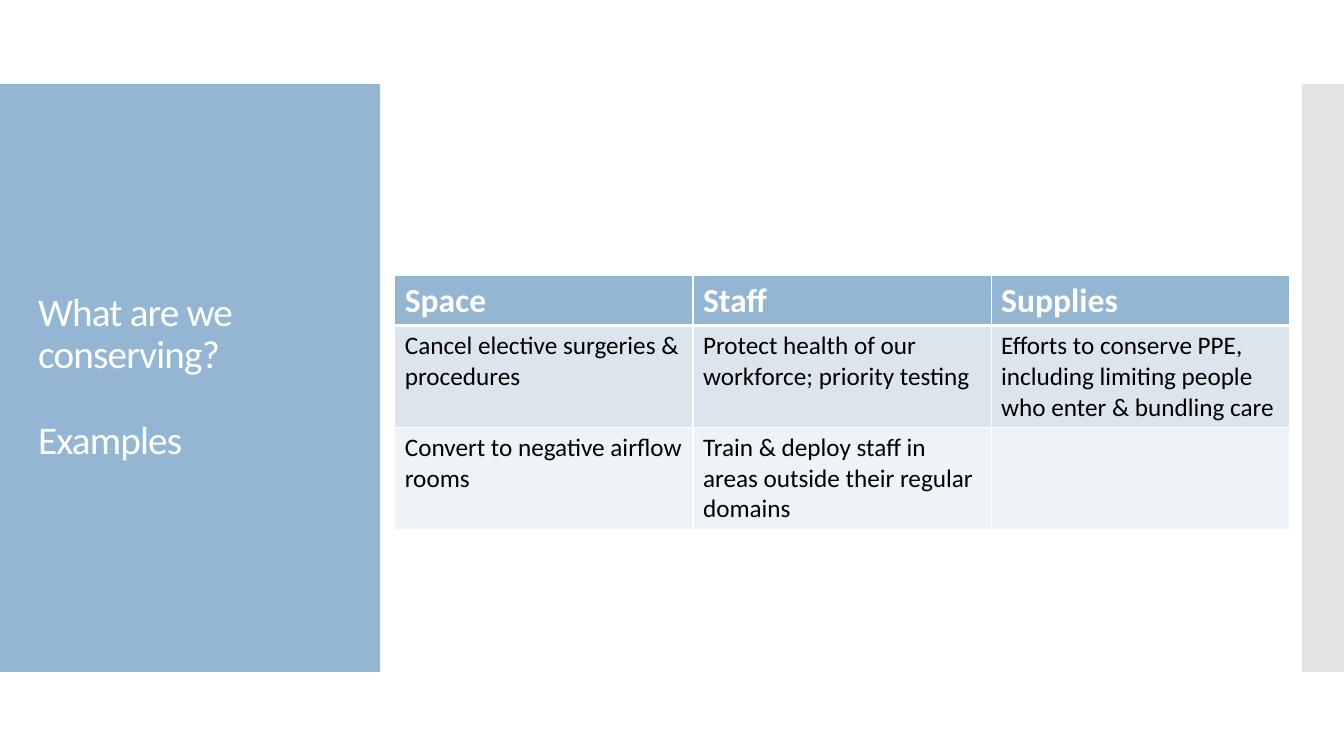
"""Build the slide listing what is conserved: space, staff and supplies."""
from lxml import etree
from pptx import Presentation
from pptx import util as u
from pptx.dml.color import RGBColor
from pptx.enum import shapes, text
from pptx.oxml.ns import qn

TITLE = ["What are we conserving?", "Examples"]
ROWS = [
    ["Space", "Staff", "Supplies"],
    ["Cancel elective surgeries & procedures",
     "Protect health of our workforce; priority testing",
     "Efforts to conserve PPE, including limiting people who enter & bundling care"],
    ["Convert to negative airflow rooms",
     "Train & deploy staff in areas outside their regular domains",
     ""],
]
COLORS = {"blue": "94B6D2", "gray": "C8C8C8", "white": "FFFFFF", "black": "000000",
          "band": "DCE5EE", "light": "EEF3F7"}
ROW_FILLS = ["blue", "band", "light"]
ROW_HEIGHTS = [48, 97, 97]
COLUMN_WIDTH = 284
TABLE_LEFT, TABLE_TOP = 376, 262
SLIDE_WIDTH, SLIDE_HEIGHT = 1280, 720
PANEL_TOP, PANEL_HEIGHT = 80, 560
PANEL_WIDTH, BAR_WIDTH = 362, 40
TITLE_BOX = (27, 118, 309, 483)
FONT = "Calibri"
THIN, THICK = 1, 3


def px(length):
    return u.Emu(length * 9525)


def rgb(name):
    return RGBColor.from_string(COLORS[name])


def add_panel(slide, left, width, color):
    shape = slide.shapes.add_shape(shapes.MSO_SHAPE.RECTANGLE, px(left), px(PANEL_TOP),
                                   px(width), px(PANEL_HEIGHT))
    shape.shadow.inherit = False
    shape.fill.solid()
    shape.fill.fore_color.rgb = rgb(color)
    shape.line.fill.background()
    return shape


def add_run(paragraph, words, size, color, bold=False):
    run = paragraph.add_run()
    run.text = words
    run.font.name = FONT
    run.font.size = u.Pt(size)
    run.font.bold = bold
    run.font.color.rgb = rgb(color)
    return run


def add_title(slide):
    frame = slide.shapes.add_textbox(*map(px, TITLE_BOX)).text_frame
    frame.word_wrap = True
    frame.vertical_anchor = text.MSO_ANCHOR.MIDDLE
    for index, words in enumerate(TITLE):
        paragraph = frame.add_paragraph() if index else frame.paragraphs[0]
        paragraph.line_spacing = 0.9
        paragraph.space_before = u.Pt(31 if index else 0)
        run = add_run(paragraph, words, 28, "white")
        run.font._element.set("spc", "-60")


def set_borders(cell, top, bottom):
    properties = cell._tc.get_or_add_tcPr()
    for side, points in (("L", THIN), ("R", THIN), ("T", top), ("B", bottom)):
        line = etree.SubElement(properties, qn(f"a:ln{side}"), w=str(u.Pt(points)))
        fill = etree.SubElement(line, qn("a:solidFill"))
        etree.SubElement(fill, qn("a:srgbClr"), val=COLORS["white"])


def add_examples(slide):
    columns = len(ROWS[0])
    table = slide.shapes.add_table(len(ROWS), columns, px(TABLE_LEFT), px(TABLE_TOP),
                                   px(columns * COLUMN_WIDTH), px(sum(ROW_HEIGHTS))).table
    for column in table.columns:
        column.width = px(COLUMN_WIDTH)
    for index, words_in_row in enumerate(ROWS):
        header = index == 0
        table.rows[index].height = px(ROW_HEIGHTS[index])
        for column, words in enumerate(words_in_row):
            cell = table.cell(index, column)
            set_borders(cell, THICK if index == 1 else THIN, THICK if header else THIN)
            cell.fill.solid()
            cell.fill.fore_color.rgb = rgb(ROW_FILLS[index])
            if words:
                add_run(cell.text_frame.paragraphs[0], words, 24 if header else 18,
                        "white" if header else "black", header)


def main():
    presentation = Presentation()
    presentation.slide_width = px(SLIDE_WIDTH)
    presentation.slide_height = px(SLIDE_HEIGHT)
    slide = presentation.slides.add_slide(presentation.slide_layouts[6])
    add_panel(slide, 0, PANEL_WIDTH, "blue")
    bar = add_panel(slide, SLIDE_WIDTH - BAR_WIDTH, BAR_WIDTH, "gray")
    bar_color = bar._element.spPr.find(qn("a:solidFill")).find(qn("a:srgbClr"))
    etree.SubElement(bar_color, qn("a:alpha"), val="50000")
    add_title(slide)
    add_examples(slide)
    presentation.save("out.pptx")


if __name__ == "__main__":
    main()
